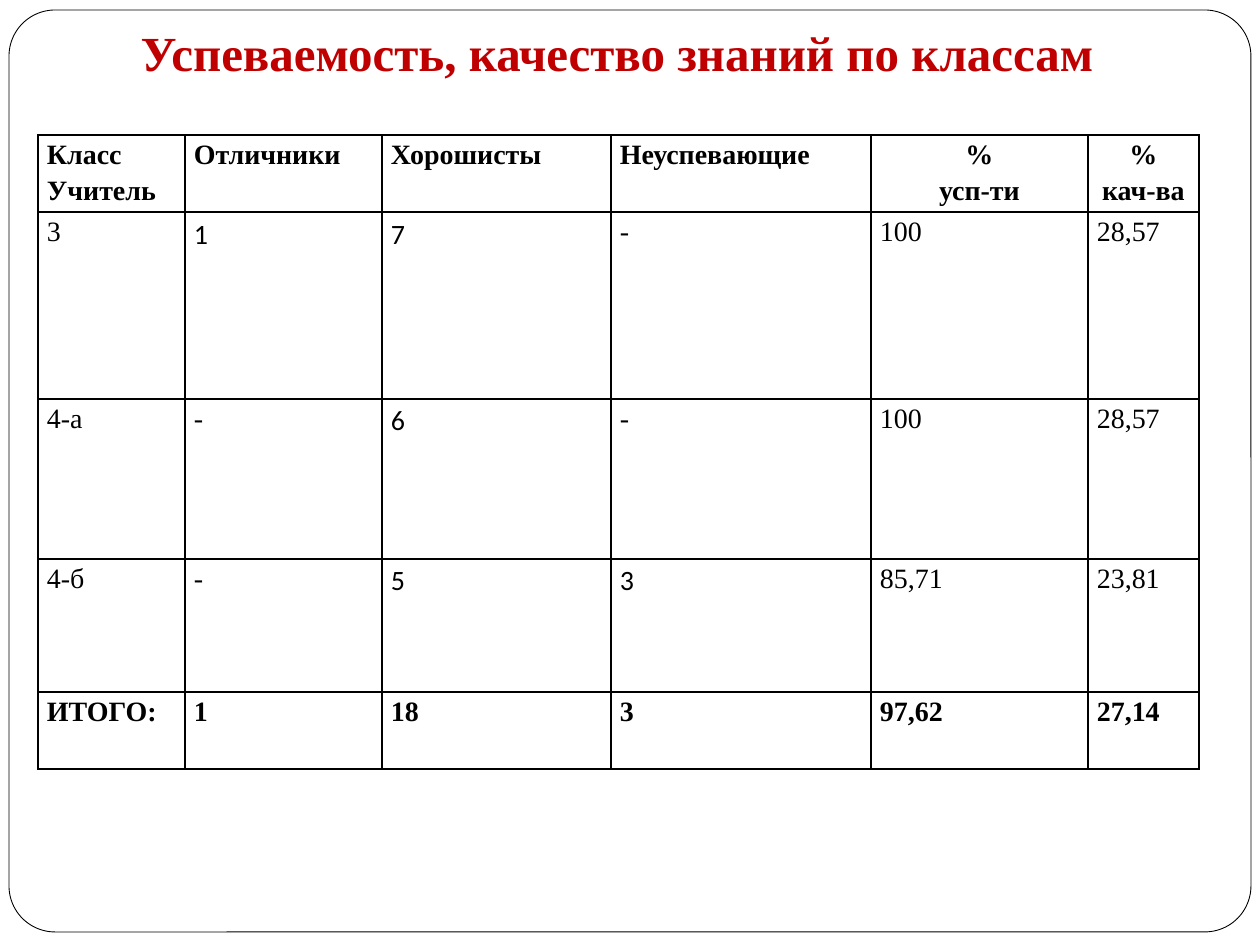
import pptx
import pptx.util
import pptx.dml.color
import pptx.enum.shapes
import pptx.enum.text
import pptx.oxml

PX = 914400 // 126
RGB = pptx.dml.color.RGBColor.from_string
ALIGN = pptx.enum.text.PP_ALIGN
ANCHOR = pptx.enum.text.MSO_ANCHOR

THEME = {
    "paper": RGB("FFFFFF"),
    "ink": RGB("000000"),
    "heading": RGB("C00000"),
    "serif": "Times New Roman",
    "sans": "Calibri",
    "title_size": pptx.util.Pt(28),
    "cell_size": pptx.util.Pt(16),
    "frame_line": pptx.util.Pt(0.5),
    "border": pptx.util.Pt(1),
}


def apply(target, values):
    for name, value in values.items():
        setattr(target, name, value)


def add_borders(cell):
    properties = cell._tc.get_or_add_tcPr()
    for position, side in enumerate(("lnL", "lnR", "lnT", "lnB")):
        line = pptx.oxml.parse_xml(
            f'<a:{side} xmlns:a="http://schemas.openxmlformats.org/drawingml/2006/main" '
            f'w="{THEME["border"]}"><a:solidFill><a:srgbClr val="{THEME["ink"]}"/>'
            f'</a:solidFill></a:{side}>'
        )
        properties.insert(position, line)


deck = pptx.Presentation()
apply(deck, {"slide_width": 1260 * PX, "slide_height": 945 * PX})
page = deck.slides.add_slide(deck.slide_layouts[5])

title = page.shapes.title
apply(title, {"left": 123 * PX, "top": 16 * PX, "width": 988 * PX, "height": 72 * PX})
apply(title.text_frame, {
    "text": "Успеваемость, качество знаний по классам",
    "word_wrap": False,
    "vertical_anchor": ANCHOR.MIDDLE,
    "auto_size": pptx.enum.text.MSO_AUTO_SIZE.SHAPE_TO_FIT_TEXT,
})
para = title.text_frame.paragraphs[0]
para.alignment = ALIGN.CENTER
apply(para.runs[0].font, {"name": THEME["serif"], "size": THEME["title_size"], "bold": True})
para.runs[0].font.color.rgb = THEME["heading"]

frame = page.shapes.add_shape(
    pptx.enum.shapes.MSO_SHAPE.ROUNDED_RECTANGLE, 9 * PX, 10 * PX, 1242 * PX, 922 * PX
)
frame.adjustments[0] = 0.05
frame.shadow.inherit = False
frame.fill.solid()
frame.fill.fore_color.rgb = THEME["paper"]
frame.line.color.rgb = THEME["ink"]
frame.line.width = THEME["frame_line"]
title.element.addprevious(frame.element)

column_widths = [147, 197, 229, 260, 217, 111]
row_heights = [77, 187, 160, 133, 77]
grades = [
    ["Класс\nУчитель", "Отличники", "Хорошисты", "Неуспевающие", "%\nусп-ти", "%\nкач-ва"],
    ["3", "1", "7", "-", "100", "28,57"],
    ["4-а", "-", "6", "-", "100", "28,57"],
    ["4-б", "-", "5", "3", "85,71", "23,81"],
    ["ИТОГО:", "1", "18", "3", "97,62", "27,14"],
]

table = page.shapes.add_table(
    len(grades), len(column_widths), 38 * PX, 135 * PX,
    sum(column_widths) * PX, sum(row_heights) * PX,
).table
apply(table, {"first_row": False, "horz_banding": False})
for column, width in zip(table.columns, column_widths):
    column.width = width * PX
for row, height in zip(table.rows, row_heights):
    row.height = height * PX

for row_index, values in enumerate(grades):
    emphasized = row_index in (0, len(grades) - 1)
    for column_index, value in enumerate(values):
        cell = table.cell(row_index, column_index)
        apply(cell, {
            "text": value,
            "margin_left": 9 * PX,
            "margin_right": 9 * PX,
            "margin_top": 0,
            "margin_bottom": 0,
            "vertical_anchor": ANCHOR.TOP,
        })
        cell.fill.solid()
        cell.fill.fore_color.rgb = THEME["paper"]
        add_borders(cell)
        is_count = not emphasized and column_index in (1, 2, 3) and value.isdigit()
        centered = row_index == 0 and column_index >= 4
        for para in cell.text_frame.paragraphs:
            apply(para, {
                "line_spacing": 1.15,
                "alignment": ALIGN.CENTER if centered else ALIGN.LEFT,
            })
            for span in para.runs:
                apply(span.font, {
                    "name": THEME["sans" if is_count else "serif"],
                    "size": THEME["cell_size"],
                    "bold": emphasized,
                })
                span.font.color.rgb = THEME["ink"]

deck.save("out.pptx")
